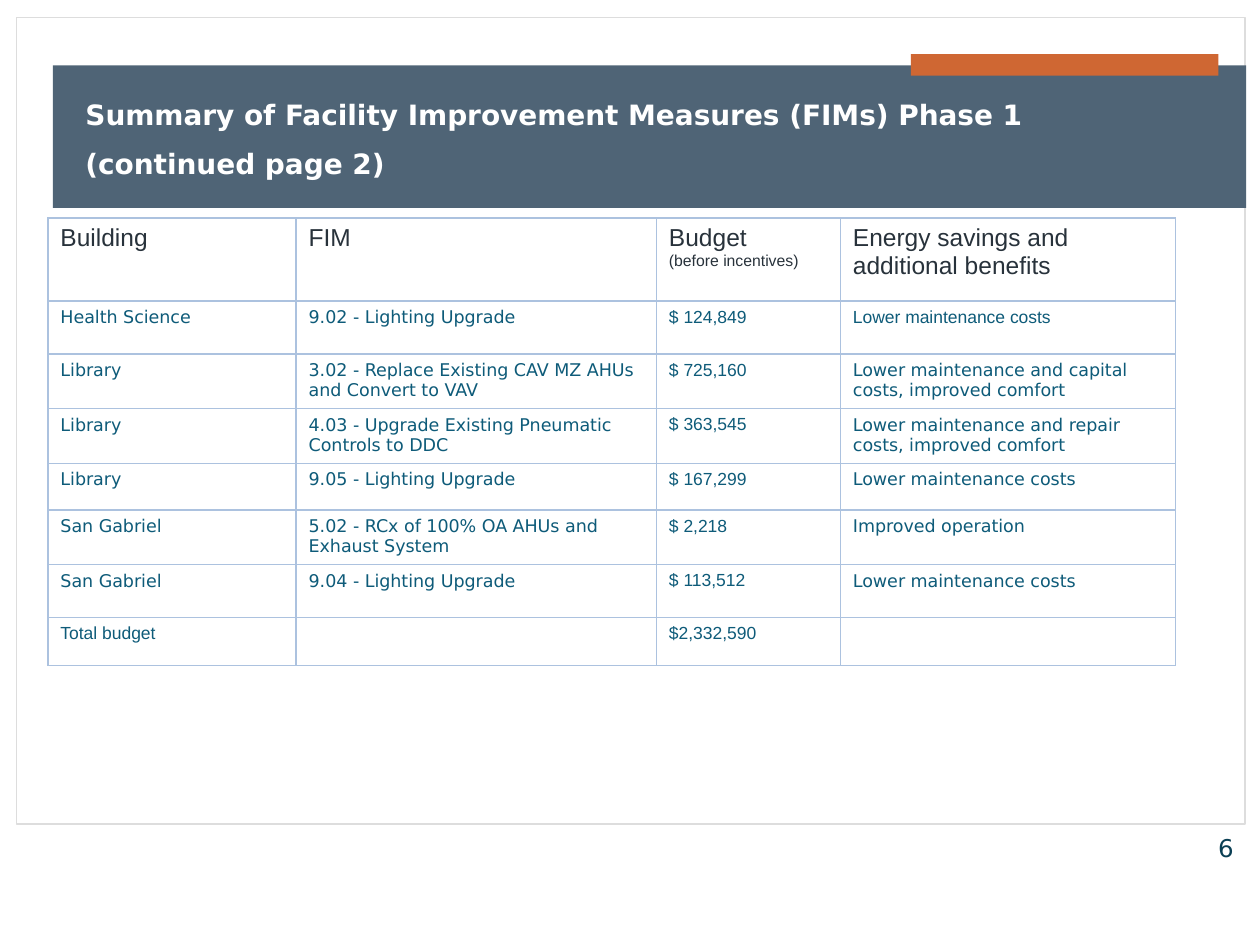
from lxml import etree
from pptx import Presentation
from pptx.dml.color import RGBColor
from pptx.enum.shapes import MSO_SHAPE
from pptx.enum.text import MSO_ANCHOR, PP_ALIGN
from pptx.oxml.ns import qn
from pptx.util import Inches, Pt

RECTANGLE = MSO_SHAPE.RECTANGLE
TOP, BOTTOM = MSO_ANCHOR.TOP, MSO_ANCHOR.BOTTOM
LEFT, RIGHT = PP_ALIGN.LEFT, PP_ALIGN.RIGHT

SANS, ARIAL = "DejaVu Sans", "Arial"
HEADER_COLOR, BODY_COLOR, BORDER_COLOR = "28323B", "0E5B79", "ACC2DF"

COLUMN_WIDTHS = [1.97, 2.86, 1.46, 2.66]
ROW_HEIGHTS = [0.66, 0.42, 0.42, 0.43, 0.37, 0.42, 0.42, 0.38]
HEADERS = ["Building", "FIM", "Budget\n(before incentives)",
           "Energy savings and additional benefits"]
MEASURES = [
    ["Health Science", "9.02 - Lighting Upgrade", "$ 124,849",
     "Lower maintenance costs"],
    ["Library", "3.02 - Replace Existing CAV MZ AHUs and Convert to VAV",
     "$ 725,160", "Lower maintenance and capital costs, improved comfort"],
    ["Library", "4.03 - Upgrade Existing Pneumatic Controls to DDC",
     "$ 363,545", "Lower maintenance and repair costs, improved comfort"],
    ["Library", "9.05 - Lighting Upgrade", "$ 167,299",
     "Lower maintenance costs"],
    ["San Gabriel", "5.02 - RCx of 100% OA AHUs and Exhaust System",
     "$ 2,218", "Improved operation"],
    ["San Gabriel", "9.04 - Lighting Upgrade", "$ 113,512",
     "Lower maintenance costs"],
    ["Total budget", "", "$2,332,590", ""],
]
BUDGET, BENEFITS = 2, 3


def rgb(color):
    return RGBColor.from_string(color)


def style(para, font, size, color, bold=False):
    para.font.name = font
    para.font.size = Pt(size)
    para.font.color.rgb = rgb(color)
    para.font.bold = bold


def add_panel(page, left, top, width, height, fill, line=None):
    panel = page.shapes.add_shape(RECTANGLE, Inches(left), Inches(top),
                                  Inches(width), Inches(height))
    panel.shadow.inherit = False
    panel.fill.solid()
    panel.fill.fore_color.rgb = rgb(fill)
    if line:
        panel.line.color.rgb = rgb(line)
        panel.line.width = Pt(1)
    else:
        panel.line.fill.background()


def add_text(page, left, top, width, height, text, size, color,
             bold=False, align=LEFT, anchor=TOP, spacing=None):
    box = page.shapes.add_textbox(Inches(left), Inches(top),
                                  Inches(width), Inches(height))
    frame = box.text_frame
    frame.word_wrap = True
    frame.vertical_anchor = anchor
    para = frame.paragraphs[0]
    para.text = text
    para.alignment = align
    if spacing:
        para.line_spacing = Pt(spacing)
    style(para, SANS, size, color, bold)


def set_borders(cell, color, points):
    properties = cell._tc.get_or_add_tcPr()
    for position, side in enumerate(("lnL", "lnR", "lnT", "lnB")):
        line = etree.Element(qn(f"a:{side}"), w=str(Pt(points)))
        fill = etree.SubElement(line, qn("a:solidFill"))
        etree.SubElement(fill, qn("a:srgbClr"), val=color)
        properties.insert(position, line)


def cell_font(row, column):
    """Header, budgets, the total and the first benefit are in Arial."""
    is_arial = (row in (0, len(MEASURES)) or column == BUDGET
                or (row, column) == (1, BENEFITS))
    return ARIAL if is_arial else SANS


def add_measures_table(page, left, top):
    rows = [HEADERS] + MEASURES
    table = page.shapes.add_table(
        len(rows), len(HEADERS), Inches(left), Inches(top),
        Inches(sum(COLUMN_WIDTHS)), Inches(sum(ROW_HEIGHTS))).table
    table.first_row = False
    table.horz_banding = False
    for column, width in zip(table.columns, COLUMN_WIDTHS):
        column.width = Inches(width)
    for row, height in zip(table.rows, ROW_HEIGHTS):
        row.height = Inches(height)

    for r, texts in enumerate(rows):
        size, color = (10, BODY_COLOR) if r else (14, HEADER_COLOR)
        for c, text in enumerate(texts):
            cell = table.cell(r, c)
            cell.fill.background()
            set_borders(cell, BORDER_COLOR, 1)
            cell.text = text
            for i, para in enumerate(cell.text_frame.paragraphs):
                # A second line in a header is a small remark
                style(para, cell_font(r, c), 9 if i else size, color)


def main():
    deck = Presentation()
    deck.slide_width, deck.slide_height = Inches(10), Inches(7.5)
    page = deck.slides.add_slide(deck.slide_layouts[6])

    # Frame, title band and accent bar
    add_panel(page, 0.13, 0.14, 9.75, 6.4, "FFFFFF", line="DDDDDD")
    add_panel(page, 0.42, 0.52, 9.47, 1.13, "4F6476")
    add_panel(page, 7.23, 0.43, 2.44, 0.17, "CF6733")

    # Title
    add_text(page, 0.58, 0.68, 9, 0.8,
             "Summary of Facility Improvement Measures (FIMs) Phase 1 "
             "(continued page 2)",
             16, "FFFFFF", bold=True, anchor=BOTTOM, spacing=28)

    # Measures
    add_measures_table(page, 0.38, 1.73)

    # Page number
    add_text(page, 8.95, 6.56, 0.94, 0.34, "6", 14, "0A3F54", align=RIGHT)

    deck.save("out.pptx")


if __name__ == "__main__":
    main()
